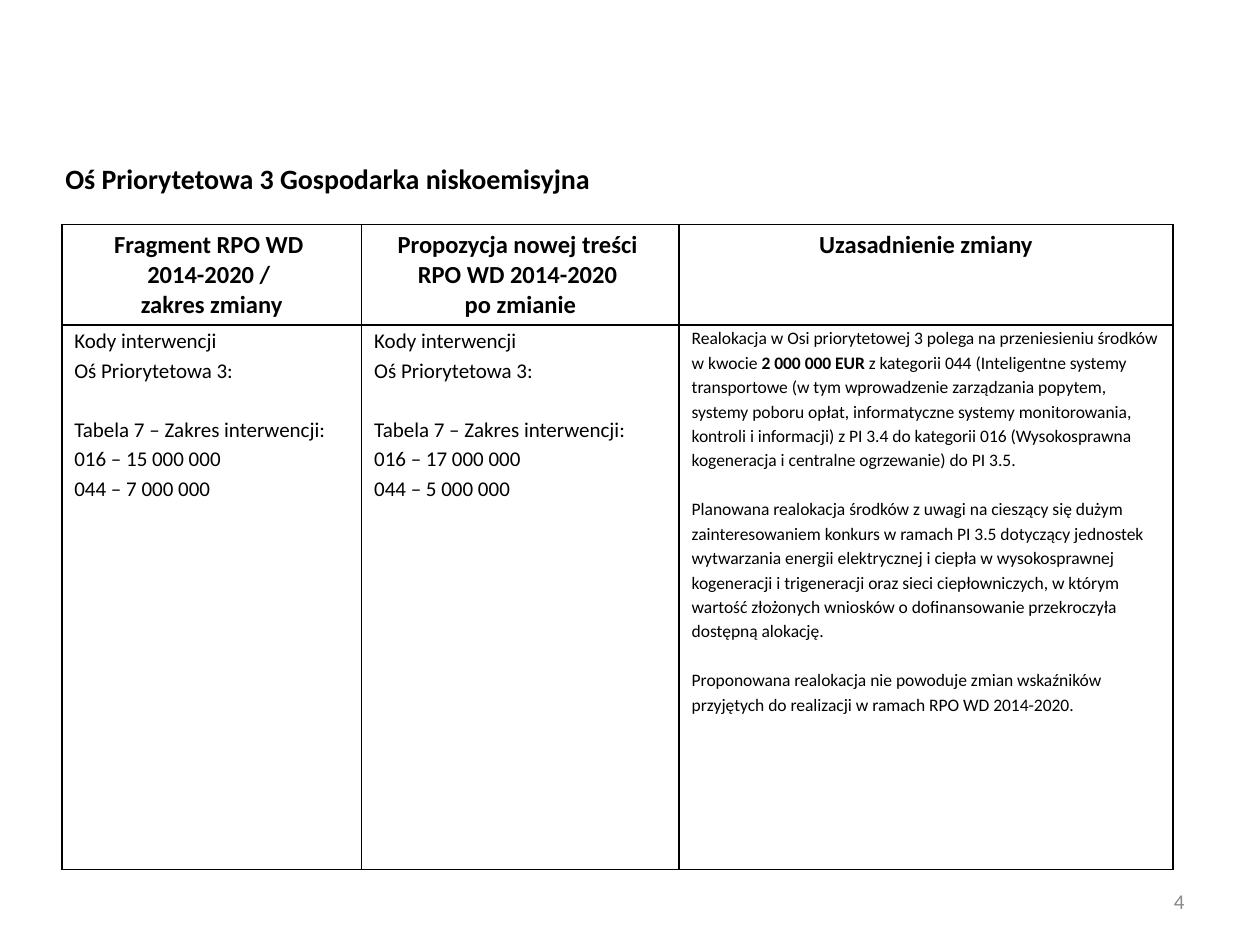
from lxml.etree import SubElement
from pptx import Presentation
from pptx.dml.color import RGBColor
from pptx.enum.text import MSO_ANCHOR, PP_ALIGN
from pptx.oxml.ns import qn
from pptx.util import Inches, Pt

FONT = "Calibri"
COLORS = {"text": "000000", "border": "000000", "cell": "FFFFFF", "number": "898989"}

COL_WIDTHS = [2.38, 2.52, 3.92]
ROW_HEIGHTS = [0.8, 4.32]
HEADERS = [
    "Fragment RPO WD \n2014-2020 / \nzakres zmiany",
    "Propozycja nowej treści \nRPO WD 2014-2020 \npo zmianie",
    "Uzasadnienie zmiany",
]
# Amounts for intervention codes 016 and 044, before and after the change
AMOUNTS = [("15 000 000", "7 000 000"), ("17 000 000", "5 000 000")]
# Each paragraph is a list of (text, bold) runs
REASONS = [
    [
        ("Realokacja w Osi priorytetowej 3 polega na przeniesieniu środków w kwocie ", False),
        ("2 000 000 EUR ", True),
        ("z kategorii 044 (Inteligentne systemy transportowe (w tym wprowadzenie "
         "zarządzania popytem, systemy poboru opłat, informatyczne systemy monitorowania, "
         "kontroli i informacji) z PI 3.4 do kategorii 016 (Wysokosprawna kogeneracja "
         "i centralne ogrzewanie) do PI 3.5.", False),
    ],
    [("Planowana realokacja środków z uwagi na cieszący się dużym zainteresowaniem konkurs "
      "w ramach PI 3.5 dotyczący jednostek wytwarzania energii elektrycznej i ciepła "
      "w wysokosprawnej kogeneracji i trigeneracji oraz sieci ciepłowniczych, w którym "
      "wartość złożonych wniosków o dofinansowanie przekroczyła dostępną alokację.", False)],
    [("Proponowana realokacja nie powoduje zmian wskaźników przyjętych do realizacji "
      "w ramach RPO WD 2014-2020.", False)],
]


def format_run(r, size, bold=False, color="text"):
    r.font.name = FONT
    r.font.size = Pt(size)
    r.font.bold = bold
    r.font.color.rgb = RGBColor.from_string(COLORS[color])


def add_label(slide, box, text, size, bold=False, color="text",
              align=PP_ALIGN.LEFT, anchor=MSO_ANCHOR.TOP):
    tf = slide.shapes.add_textbox(*map(Inches, box)).text_frame
    tf.word_wrap = True
    tf.vertical_anchor = anchor
    p = tf.paragraphs[0]
    p.text = text
    p.alignment = align
    format_run(p.runs[0], size, bold, color)


def style_cell(cell):
    tc_pr = cell._tc.get_or_add_tcPr()
    for side in ("lnL", "lnR", "lnT", "lnB"):
        ln = SubElement(tc_pr, qn(f"a:{side}"), w=str(Pt(1)))
        fill = SubElement(ln, qn("a:solidFill"))
        SubElement(fill, qn("a:srgbClr"), val=COLORS["border"])
    cell.fill.solid()
    cell.fill.fore_color.rgb = RGBColor.from_string(COLORS["cell"])


def fill_header(cell, text):
    p = cell.text_frame.paragraphs[0]
    p.text = text
    p.alignment = PP_ALIGN.CENTER
    for r in p.runs:
        format_run(r, 14, bold=True)


def fill_body(cell, paragraphs, size, gaps):
    """Write paragraphs of runs; those whose index is in gaps get one line of space before."""
    cell.margin_top = cell.margin_bottom = 0
    tf = cell.text_frame
    for i, runs in enumerate(paragraphs):
        p = tf.add_paragraph() if i else tf.paragraphs[0]
        p.line_spacing = 1.15
        if i in gaps:
            p.space_before = Pt(round(size * 1.4, 1))
        for text, bold in runs:
            r = p.add_run()
            r.text = text
            format_run(r, size, bold)


def add_change_table(slide, left, top):
    frame = slide.shapes.add_table(
        len(ROW_HEIGHTS), len(COL_WIDTHS), Inches(left), Inches(top),
        Inches(sum(COL_WIDTHS)), Inches(sum(ROW_HEIGHTS)))
    table = frame.table
    table.first_row = table.horz_banding = False
    for col, width in zip(table.columns, COL_WIDTHS):
        col.width = Inches(width)
    for row, height in zip(table.rows, ROW_HEIGHTS):
        row.height = Inches(height)
    for cell in table.iter_cells():
        style_cell(cell)

    # Header row
    for i, text in enumerate(HEADERS):
        fill_header(table.cell(0, i), text)

    # Intervention codes before and after, then the justification
    for i, (code_016, code_044) in enumerate(AMOUNTS):
        lines = ["Kody interwencji", "Oś Priorytetowa 3:", "Tabela 7 – Zakres interwencji:",
                 f"016 – {code_016}", f"044 – {code_044}"]
        fill_body(table.cell(1, i), [[(line, False)] for line in lines], 12, gaps={2})
    fill_body(table.cell(1, 2), REASONS, 10, gaps={1, 2})


def main():
    prs = Presentation()
    prs.slide_width, prs.slide_height = Inches(10), Inches(7.5)
    slide = prs.slides.add_slide(prs.slide_layouts[6])

    # Heading
    add_label(slide, (0.42, 1.23, 9.45, 0.55),
              "Oś Priorytetowa 3 Gospodarka niskoemisyjna", 16, bold=True)
    # Page number
    add_label(slide, (7.17, 6.95, 2.33, 0.4), "4", 12, color="number",
              align=PP_ALIGN.RIGHT, anchor=MSO_ANCHOR.MIDDLE)
    # Table of changes
    add_change_table(slide, 0.49, 1.78)

    prs.save("out.pptx")


if __name__ == "__main__":
    main()
